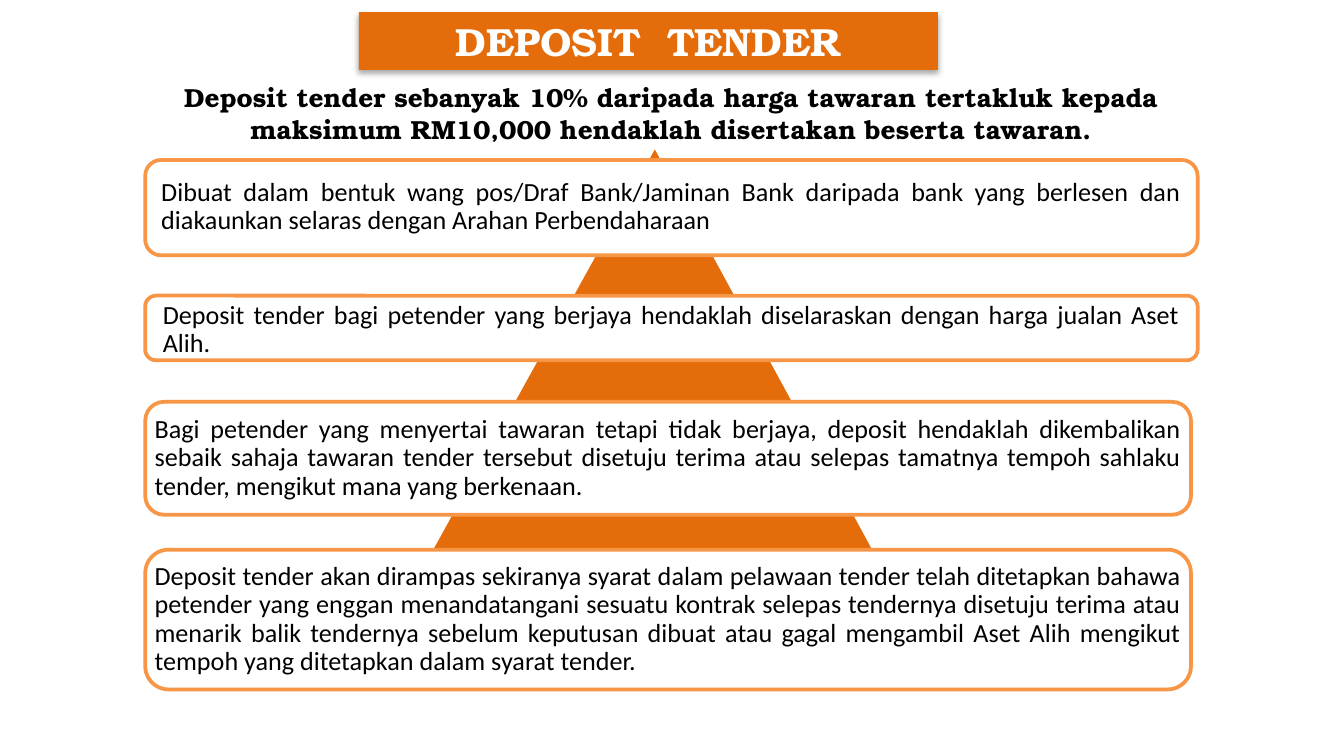
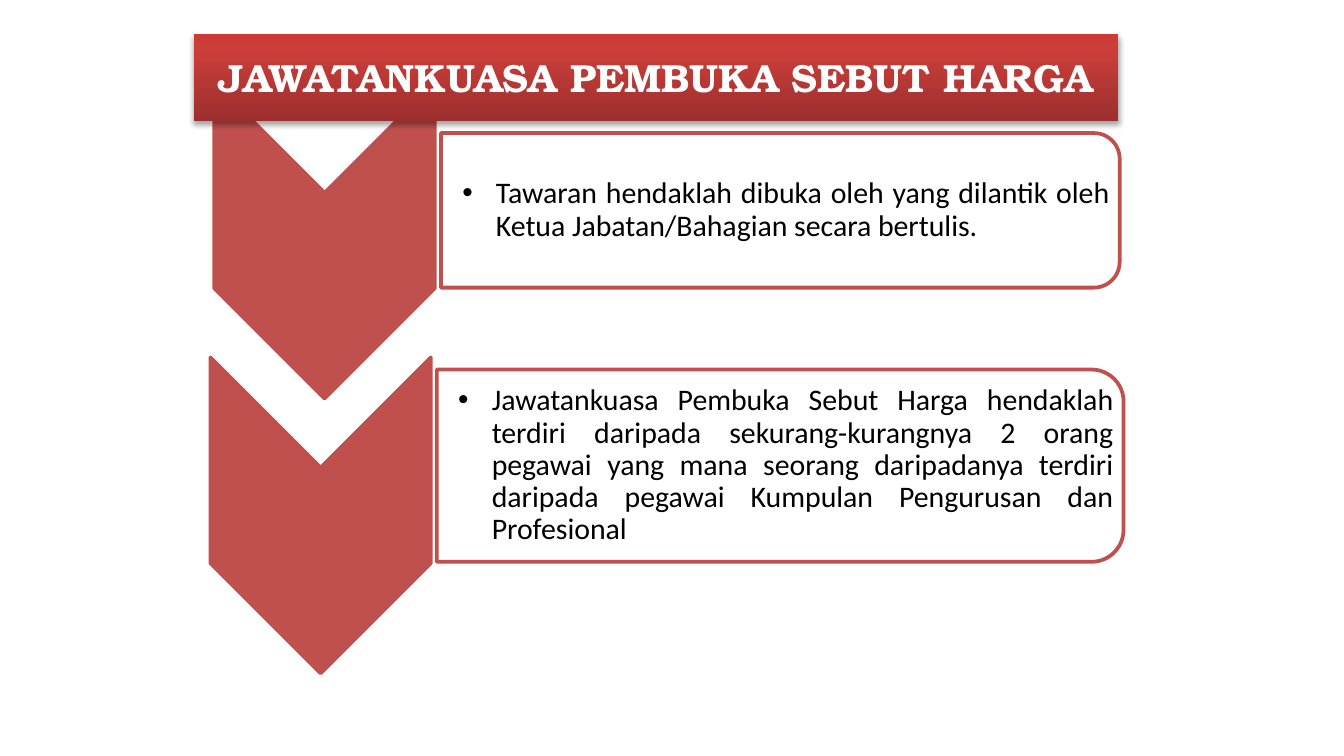
from copy import deepcopy

from lxml.etree import SubElement
from pptx import Presentation
from pptx.dml.color import RGBColor
from pptx.enum.shapes import MSO_SHAPE as Shape
from pptx.enum.text import MSO_ANCHOR as Anchor, PP_ALIGN as Align
from pptx.oxml.ns import qn
from pptx.util import Pt

COLORS = {
    "white": "FFFFFF",
    "black": "000000",
    "orange": "E46C0A",
    "card_line": "F79646",
    "red": "C0504D",
    "red_dark": "9C2F2D",
    "red_mid": "CB3E3A",
    "red_light": "CE3B37",
}
BODY_FONT = "Calibri"
TITLE_FONT = "TeX Gyre Bonum"
LINE_WIDTH = 2
BLANK_LAYOUT = 6

# Each card: left, top, width, height; text inset at the sides; text top and height
CARDS = [
    ((77.8, 85.7, 563.8, 51.1), 3.6, 87.8, 46.1, 5,
     "Dibuat dalam bentuk wang pos/Draf Bank/Jaminan Bank daripada bank yang "
     "berlesen dan diakaunkan selaras dengan Arahan Perbendaharaan"),
    ((77.8, 158.4, 563.8, 34.6), 3.6, 163.4, 26.6, 5.8,
     "Deposit tender bagi petender yang berjaya hendaklah diselaraskan dengan "
     "harga jualan Aset Alih."),
    ((77.8, 215.3, 560.2, 60.5), 0, 218.2, 54.7, 5,
     "Bagi petender yang menyertai tawaran tetapi tidak berjaya, deposit "
     "hendaklah dikembalikan sebaik sahaja tawaran tender tersebut disetuju "
     "terima atau selepas tamatnya tempoh sahlaku tender, mengikut mana yang "
     "berkenaan."),
    ((77.8, 294.5, 560.2, 74.9), 0, 298.1, 67.7, 5,
     "Deposit tender akan dirampas sekiranya syarat dalam pelawaan tender telah "
     "ditetapkan bahawa petender yang enggan menandatangani sesuatu kontrak "
     "selepas tendernya disetuju terima atau menarik balik tendernya sebelum "
     "keputusan dibuat atau gagal mengambil Aset Alih mengikut tempoh yang "
     "ditetapkan dalam syarat tender."),
]

# Each step: chevron box, panel box, text
STEPS = [
    ((114.8, 44.3, 118.1, 169.2), (236.2, 71.3, 363.6, 82.8),
     "Tawaran hendaklah dibuka oleh yang dilantik oleh Ketua Jabatan/Bahagian "
     "secara bertulis."),
    ((112.7, 191.5, 118.1, 169.2), (234, 198, 367.9, 103),
     "Jawatankuasa Pembuka Sebut Harga hendaklah terdiri daripada "
     "sekurang-kurangnya 2 orang pegawai yang mana seorang daripadanya terdiri "
     "daripada pegawai Kumpulan Pengurusan dan Profesional"),
]


def rgb(name):
    return RGBColor.from_string(COLORS[name])


def add_figure(page, kind, box, fill, line=None, turned=False):
    """Draw a preset shape; a turned one still fills the given box."""
    left, top, width, height = box
    if turned:
        left += (width - height) / 2
        top += (height - width) / 2
        width, height = height, width
    figure = page.shapes.add_shape(kind, Pt(left), Pt(top), Pt(width), Pt(height))
    figure.rotation = 90 if turned else 0
    figure.shadow.inherit = False
    figure.fill.solid()
    figure.fill.fore_color.rgb = rgb(fill)
    if line:
        figure.line.color.rgb = rgb(line)
        figure.line.width = Pt(LINE_WIDTH)
    else:
        figure.line.fill.background()
    return figure


def write_text(holder, text, size, font=BODY_FONT, color="black", bold=False,
               align=Align.JUSTIFY, anchor=Anchor.MIDDLE, spacing=None,
               insets=(7.2, 3.6, 7.2, 3.6), bullet=None):
    frame = holder.text_frame
    frame.text = text
    frame.word_wrap = True
    frame.vertical_anchor = anchor
    (frame.margin_left, frame.margin_top,
     frame.margin_right, frame.margin_bottom) = map(Pt, insets)
    para = frame.paragraphs[0]
    para.alignment = align
    para.line_spacing = spacing
    if bullet:
        props = para._p.get_or_add_pPr()
        props.set("marL", str(Pt(18)))
        props.set("indent", str(Pt(-18)))
        SubElement(props, qn("a:buFont"), typeface="Arial")
        SubElement(props, qn("a:buChar"), char=bullet)
    for span in para.runs:
        span.font.name = font
        span.font.size = Pt(size)
        span.font.bold = bold
        span.font.color.rgb = rgb(color)


def add_text(page, box, text, size, **style):
    holder = page.shapes.add_textbox(*map(Pt, box))
    write_text(holder, text, size, **style)


def add_soft_shadow(figure):
    effects = figure._element.spPr.find(qn("a:effectLst"))
    shadow = SubElement(effects, qn("a:outerShdw"), blurRad=str(Pt(3.1)),
                        dist=str(Pt(1.8)), dir="5400000", rotWithShape="0")
    tint = SubElement(shadow, qn("a:srgbClr"), val=COLORS["black"])
    SubElement(tint, qn("a:alpha"), val="35000")


def add_title(page, box, text, fill):
    banner = add_figure(page, Shape.RECTANGLE, box, fill)
    add_soft_shadow(banner)
    write_text(banner, text, 21, font=TITLE_FONT, color="white", bold=True,
               align=Align.CENTER)
    return banner


def shade_upward(figure, stops):
    """Fill with a gradient that runs from the bottom to the top."""
    figure.fill.gradient()
    figure.fill.gradient_angle = 90
    stop_list = figure._element.spPr.find(".//" + qn("a:gsLst"))
    while len(stop_list) < len(stops):
        stop_list.append(deepcopy(stop_list[-1]))
    for stop, (position, color) in zip(figure.fill.gradient_stops, stops):
        stop.position = position
        stop.color.rgb = rgb(color)


def add_card(page, box, side, text_top, text_height, inset, text):
    left, _, width, _ = box
    add_figure(page, Shape.ROUNDED_RECTANGLE, box, "white", "card_line")
    add_text(page, (left + side, text_top, width - 2 * side, text_height),
             text, 14, spacing=0.9, insets=(inset,) * 4)


def add_step(page, chevron_box, panel_box, text):
    add_figure(page, Shape.CHEVRON, chevron_box, "red", "red", turned=True)
    add_figure(page, Shape.ROUND_2_SAME_RECTANGLE, panel_box, "white", "red",
               turned=True)
    left, top, width, height = panel_box
    gap = 4.5
    add_text(page, (left, top + gap, width - gap, height - 2 * gap), text, 16,
             spacing=0.9, insets=(11.5, 0.7, 0.7, 0.7), bullet="•")


def build_deposit_page(page):
    # Pyramid behind the cards
    pyramid = add_figure(page, Shape.ISOSCELES_TRIANGLE,
                         (189.4, 77.8, 319.7, 291.6), "orange", "white")
    pyramid.adjustments[0] = 0.505
    for card in CARDS:
        add_card(page, *card)
    # Title and lead sentence
    add_title(page, (192.2, 6.5, 310.3, 31), "DEPOSIT  TENDER", "orange")
    add_text(page, (77.8, 40.3, 563.8, 41),
             "Deposit tender sebanyak 10% daripada harga tawaran tertakluk kepada "
             "maksimum RM10,000 hendaklah disertakan beserta tawaran.",
             14, font=TITLE_FONT, bold=True, align=Align.CENTER, anchor=Anchor.TOP)


def build_committee_page(page):
    for step in STEPS:
        add_step(page, *step)
    # Title covers the top of the first chevron
    banner = add_title(page, (103.7, 18, 495.4, 46.8),
                       "JAWATANKUASA PEMBUKA SEBUT HARGA", "red_mid")
    shade_upward(banner, [(0, "red_dark"), (0.8, "red_mid"), (1, "red_light")])


def main():
    deck = Presentation()
    deck.slide_width, deck.slide_height = Pt(720), Pt(405)
    for build in (build_deposit_page, build_committee_page):
        build(deck.slides.add_slide(deck.slide_layouts[BLANK_LAYOUT]))
    deck.save("out.pptx")


if __name__ == "__main__":
    main()
